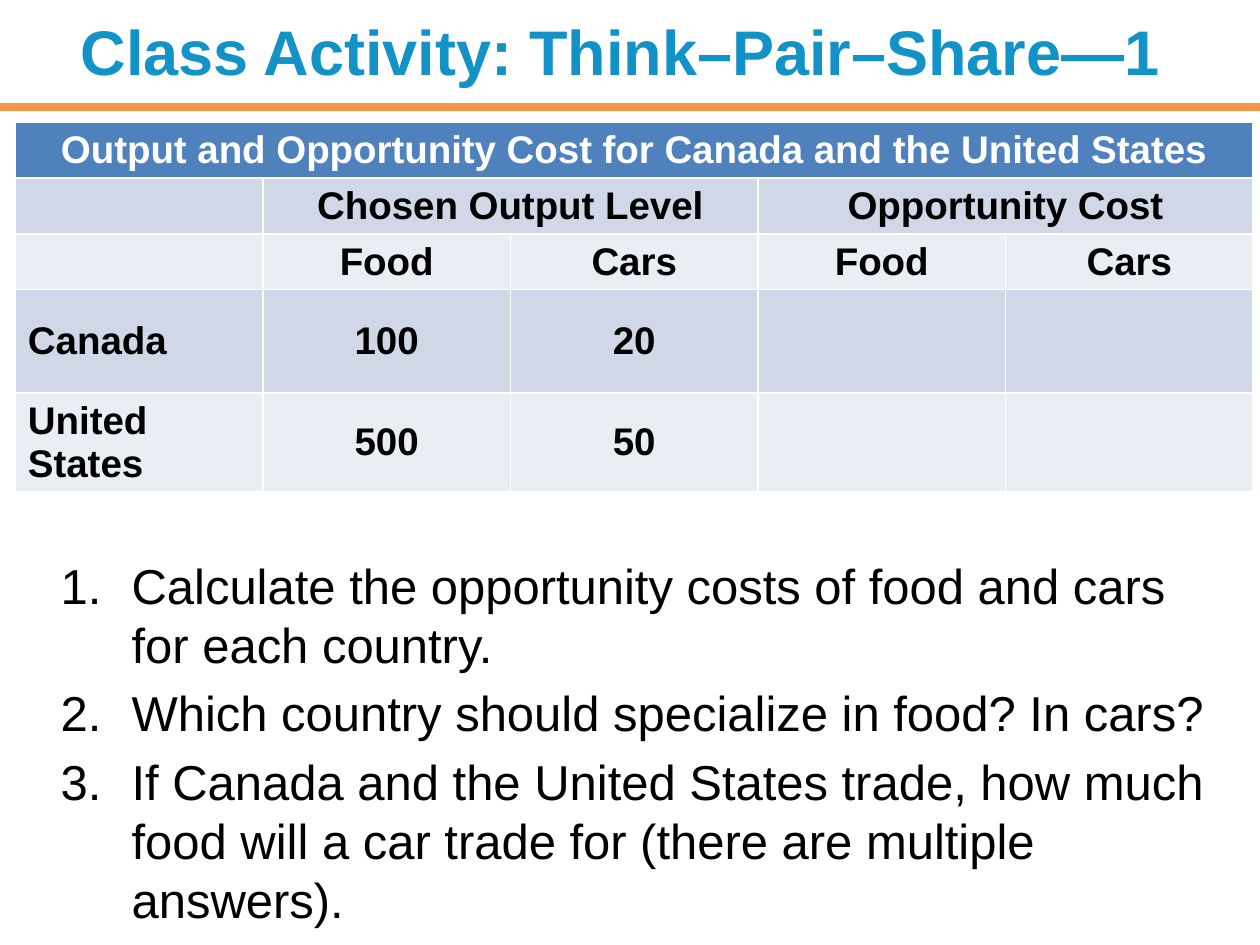
from lxml import etree
from pptx import Presentation
from pptx.dml.color import RGBColor
from pptx.enum import shapes, text
from pptx.oxml.ns import qn
from pptx.util import Cm, Pt

HEADING = "Class Activity: Think–Pair–Share—1"
QUESTIONS = [
    "Calculate the opportunity costs of food and cars for each country.",
    "Which country should specialize in food? In cars?",
    "If Canada and the United States trade, how much food will a car trade for "
    "(there are multiple answers).",
]
COSTS = [
    ["Output and Opportunity Cost for Canada and the United States", "", "", "", ""],
    ["", "Chosen Output Level", "", "Opportunity Cost", ""],
    ["", "Food", "Cars", "Food", "Cars"],
    ["Canada", "100", "20", "", ""],
    ["United States", "500", "50", "", ""],
]
ROW_HEIGHTS = [1.04, 1.04, 1.04, 2.08, 1.04]
ROW_FILLS = ["4F81BD", "D0D8E8", "E9EDF4", "D0D8E8", "E9EDF4"]
MERGES = [(0, 0, 4), (1, 1, 2), (1, 3, 4)]


def colour(value):
    """Turn a hex string into a colour."""
    return RGBColor.from_string(value)


def write(paragraph, words, size=22, hue="000000", bold=False, align=None):
    """Write formatted words into a paragraph."""
    run = paragraph.add_run()
    run.text = words
    run.font.name = "Arial"
    run.font.size = Pt(size)
    run.font.bold = bold
    run.font.color.rgb = colour(hue)
    paragraph.alignment = align


def place(holder, left, top, width, height):
    """Move a placeholder and return its text frame without autofit."""
    holder.left, holder.top = Cm(left), Cm(top)
    holder.width, holder.height = Cm(width), Cm(height)
    holder.text_frame.auto_size = text.MSO_AUTO_SIZE.NONE
    return holder.text_frame


def add_heading(slide):
    """Fill the title placeholder."""
    frame = place(slide.shapes.title, 1.37, -0.05, 22.86, 2.13)
    write(frame.paragraphs[0], HEADING, size=36, hue="1392C8", bold=True,
          align=text.PP_ALIGN.LEFT)


def add_rule(slide, width):
    """Draw the rule below the heading."""
    rule = slide.shapes.add_connector(
        shapes.MSO_CONNECTOR.STRAIGHT, 0, Cm(2.16), width, Cm(2.16))
    rule.line.color.rgb = colour("F79646")
    rule.line.width = Pt(4.5)
    etree.SubElement(rule._element.spPr, qn("a:effectLst"))


def add_questions(slide):
    """Fill the body placeholder with the numbered questions."""
    frame = place(slide.placeholders[1], 0.97, 11.07, 23.85, 6.65)
    for index, question in enumerate(QUESTIONS):
        paragraph = frame.paragraphs[0] if index == 0 else frame.add_paragraph()
        write(paragraph, question, size=28)
        properties = paragraph._p.get_or_add_pPr()
        properties.set("marL", str(Cm(1.43)))
        properties.set("indent", str(Cm(-1.43)))
        etree.SubElement(properties, qn("a:buFont"), typeface="+mj-lt")
        etree.SubElement(properties, qn("a:buAutoNum"), type="arabicPeriod")


def add_costs(slide):
    """Add the table of output and opportunity cost."""
    costs = slide.shapes.add_table(
        len(COSTS), len(COSTS[0]), Cm(0.31), Cm(2.47), Cm(24.95),
        Cm(sum(ROW_HEIGHTS))).table
    for row, height in zip(costs.rows, ROW_HEIGHTS):
        row.height = Cm(height)
    for row, first, last in MERGES:
        costs.cell(row, first).merge(costs.cell(row, last))
    for row, entries in enumerate(COSTS):
        for column, entry in enumerate(entries):
            cell = costs.cell(row, column)
            cell.fill.solid()
            cell.fill.fore_color.rgb = colour(ROW_FILLS[row])
            if row > 2:
                cell.vertical_anchor = text.MSO_ANCHOR.MIDDLE
            if entry:
                is_country = row > 2 and column == 0
                write(cell.text_frame.paragraphs[0], entry, bold=True,
                      hue="000000" if row else "FFFFFF",
                      align=None if is_country else text.PP_ALIGN.CENTER)


def main():
    """Build and save the slide."""
    deck = Presentation()
    deck.slide_width, deck.slide_height = Cm(25.4), Cm(19.05)
    slide = deck.slides.add_slide(deck.slide_layouts[1])
    add_rule(slide, deck.slide_width)
    add_heading(slide)
    add_questions(slide)
    add_costs(slide)
    deck.save("out.pptx")


if __name__ == "__main__":
    main()
